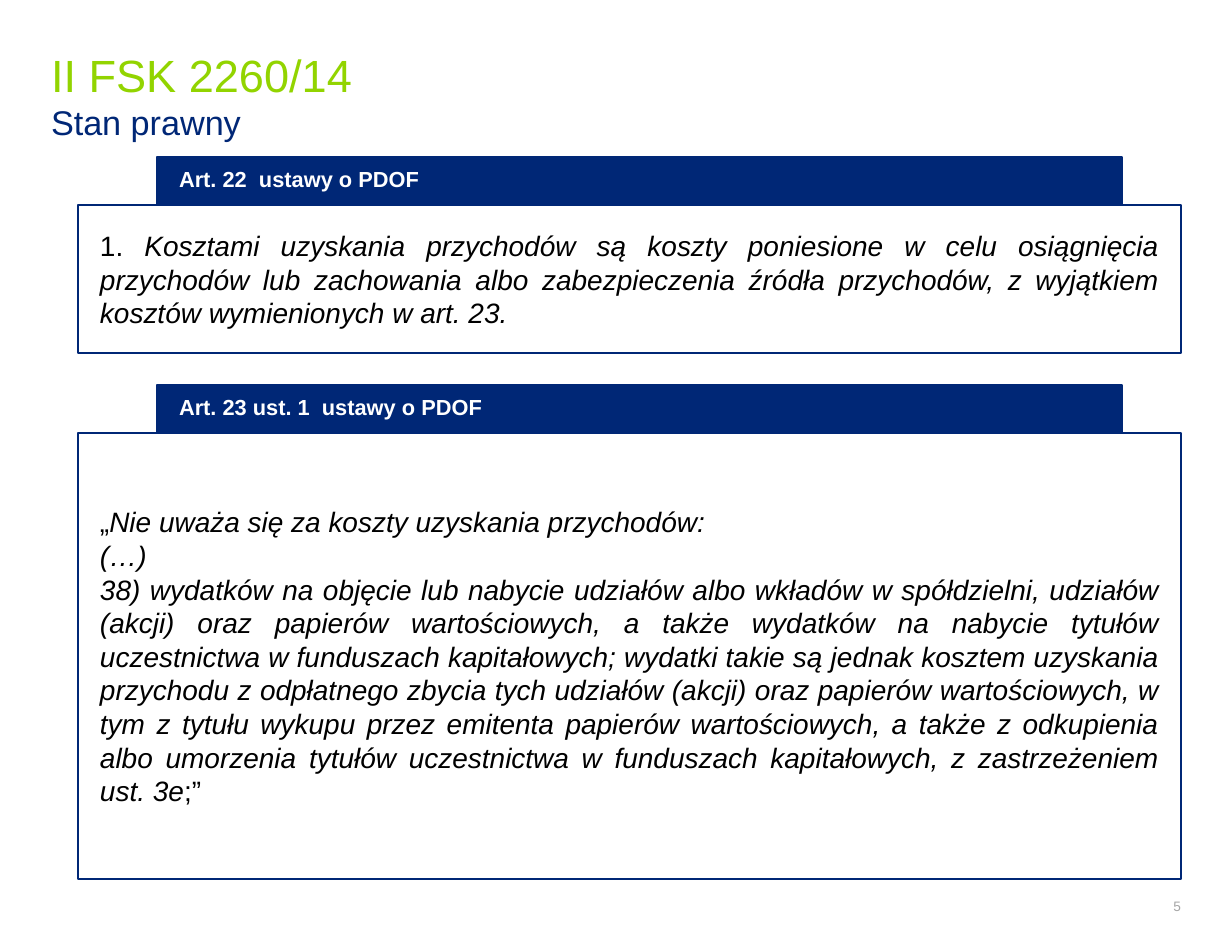
from pptx import Presentation
from pptx import util as u
from pptx.dml.color import RGBColor
from pptx.enum import shapes, text

INK = {"navy": "002776", "lime": "92D400", "grey": "A6A6A6",
       "black": "000000", "white": "FFFFFF"}
LEFT, RIGHT, JUST = (text.PP_ALIGN.LEFT, text.PP_ALIGN.RIGHT,
                     text.PP_ALIGN.JUSTIFY)
HEAD, INSET = 48, 22

RULES = [
    ("Art. 22  ustawy o PDOF", (78, 157, 1103, 196), [
        [("1. ", False),
         ("Kosztami uzyskania przychodów są koszty poniesione w celu "
          "osiągnięcia przychodów lub zachowania albo zabezpieczenia źródła "
          "przychodów, z wyjątkiem kosztów wymienionych w art. 23.", True)],
    ]),
    ("Art. 23 ust. 1  ustawy o PDOF", (78, 385, 1103, 494), [
        [("„", False),
         ("Nie uważa się za koszty uzyskania przychodów:", True)],
        [("(…)", True)],
        [("38) wydatków na objęcie lub nabycie udziałów albo wkładów w "
          "spółdzielni, udziałów (akcji) oraz papierów wartościowych, a także "
          "wydatków na nabycie tytułów uczestnictwa w funduszach "
          "kapitałowych; wydatki takie są jednak kosztem uzyskania przychodu "
          "z odpłatnego zbycia tych udziałów (akcji) oraz papierów "
          "wartościowych, w tym z tytułu wykupu przez emitenta papierów "
          "wartościowych, a także z odkupienia albo umorzenia tytułów "
          "uczestnictwa w funduszach kapitałowych, z zastrzeżeniem ust. 3e",
          True),
         (";”", False)],
    ]),
]


def px(n):
    """Turn pixels into EMU."""
    return u.Inches(n / 112)


def tint(name):
    """Look up a colour by name."""
    return RGBColor.from_string(INK[name])


def frame(shape, inset=0):
    """Set up wrapping, anchor and insets of a shape's text."""
    tf = shape.text_frame
    tf.word_wrap = True
    tf.auto_size = text.MSO_AUTO_SIZE.NONE
    tf.vertical_anchor = text.MSO_ANCHOR.MIDDLE
    tf.margin_left = tf.margin_right = px(inset)
    tf.margin_top = tf.margin_bottom = px(inset)
    return tf


def line(tf, align, first):
    """Return the first paragraph or a new one, aligned."""
    par = tf.paragraphs[0] if first else tf.add_paragraph()
    par.alignment = align
    return par


def write(par, words, size, ink, bold=False, slant=False):
    """Add one formatted run."""
    run = par.add_run()
    run.text = words
    font = run.font
    font.name, font.size = "Arial", u.Pt(size)
    font.bold, font.italic = bold, slant
    font.color.rgb = tint(ink)


def block(slide, box, fill=None):
    """Draw a navy-edged rectangle and return its text frame."""
    shape = slide.shapes.add_shape(shapes.MSO_SHAPE.RECTANGLE, *map(px, box))
    shape.shadow.inherit = False
    if fill:
        shape.fill.solid()
        shape.fill.fore_color.rgb = tint(fill)
    else:
        shape.fill.background()
    shape.line.color.rgb = tint("navy")
    shape.line.width = u.Pt(1)
    return frame(shape, INSET)


def title(slide, box):
    """Fill the title placeholder with title and subtitle."""
    shape = slide.shapes.title
    shape.left, shape.top, shape.width, shape.height = map(px, box)
    tf = frame(shape)
    rows = [("II FSK 2260/14", 29, "lime"), ("Stan prawny", 22, "navy")]
    for i, (words, size, ink) in enumerate(rows):
        write(line(tf, LEFT, i == 0), words, size, ink)


def rule(slide, box, name, paras):
    """Place a legal provision: a heading tab above a framed quote."""
    x, y, w, h = box
    par = line(block(slide, (x + 79, y, w - 138, HEAD - 1), "navy"), LEFT, True)
    par.line_spacing, par.space_after = u.Pt(15), u.Pt(6)
    write(par, name, 14, "white", bold=True)
    tf = block(slide, (x, y + HEAD, w, h - HEAD))
    for i, runs in enumerate(paras):
        par = line(tf, JUST, i == 0)
        for words, slant in runs:
            write(par, words, 18, "black", slant=slant)


def number(slide, box, words):
    """Place the page number."""
    tf = frame(slide.shapes.add_textbox(*map(px, box)))
    write(line(tf, RIGHT, True), words, 8.8, "grey")


def main():
    """Build and save the slide."""
    deck = Presentation()
    deck.slide_width, deck.slide_height = px(1232), px(952)
    slide = deck.slides.add_slide(deck.slide_layouts[5])
    title(slide, (51, 35, 1130, 120))
    for name, box, paras in RULES:
        rule(slide, box, name, paras)
    number(slide, (1074, 889, 107, 35), "5")
    deck.save("out.pptx")


if __name__ == "__main__":
    main()
